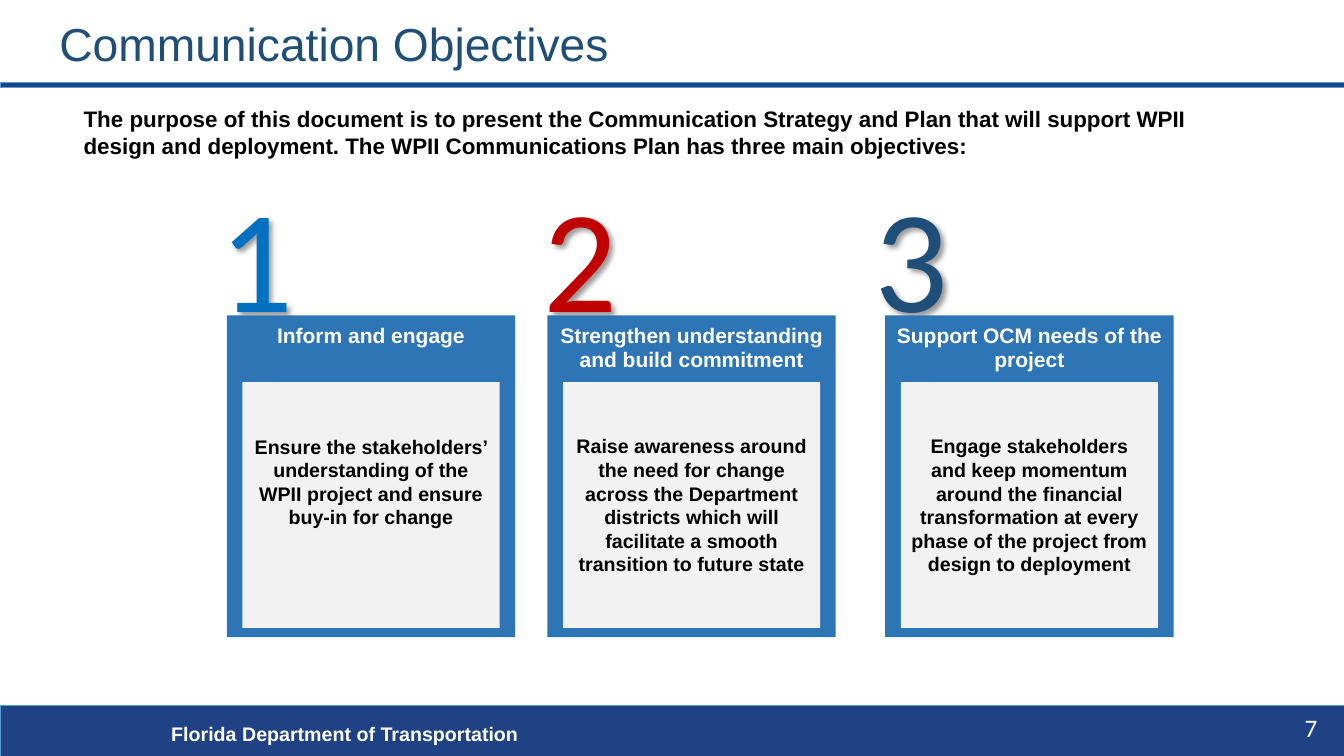
from dataclasses import dataclass

from lxml.etree import SubElement
from pptx import Presentation
from pptx.dml.color import RGBColor
from pptx.enum.shapes import MSO_SHAPE
from pptx.enum.text import MSO_ANCHOR, PP_ALIGN
from pptx.oxml.ns import qn
from pptx.shapes.autoshape import Shape
from pptx.slide import Slide
from pptx.util import Inches, Pt


@dataclass(frozen=True)
class Theme:
    font: str = "Arial"
    number_font: str = "Calibri"
    navy: str = "1F4284"
    edge: str = "5B9BD5"
    title: str = "1F4E79"
    card: str = "2E75B6"
    panel: str = "F2F2F2"
    white: str = "FFFFFF"
    black: str = "000000"
    title_size: float = 33
    intro_size: float = 16
    heading_size: float = 15
    body_size: float = 14
    page_size: float = 18
    number_size: float = 104.3


@dataclass(frozen=True)
class Box:
    left: float
    top: float
    width: float
    height: float


@dataclass(frozen=True)
class Objective:
    number: str
    color: str
    number_left: float
    card_left: float
    heading: str
    body: str
    body_bottom_inset: float = 0.05


THEME = Theme()
DEFAULT_INSETS = (0.1, 0.05, 0.1, 0.05)

OBJECTIVES = [
    Objective("1", "0070C0", 1.98, 2.25, "Inform and engage",
              "Ensure the stakeholders’ understanding of the WPII project "
              "and ensure buy-in for change", 0.51),
    Objective("2", "C00000", 5.2, 5.43,
              "Strengthen understanding and build commitment",
              "Raise awareness around the need for change across the Department "
              "districts which will facilitate a smooth transition to future state"),
    Objective("3", THEME.title, 8.48, 8.78, "Support OCM needs of the project",
              "Engage stakeholders and keep momentum around the financial "
              "transformation at every phase of the project from design to deployment"),
]


def write_text(shape: Shape, text: str, *, size: float, color: str,
               font: str = THEME.font, bold: bool = False,
               align: PP_ALIGN = PP_ALIGN.LEFT,
               anchor: MSO_ANCHOR = MSO_ANCHOR.TOP,
               insets: tuple[float, float, float, float] = DEFAULT_INSETS,
               line_spacing: float = 1.0, space_after: float = 0,
               wrap: bool = True) -> None:
    """Fill a shape with one paragraph; insets run left, top, right, bottom."""
    frame = shape.text_frame
    frame.word_wrap = wrap
    frame.vertical_anchor = anchor
    (frame.margin_left, frame.margin_top,
     frame.margin_right, frame.margin_bottom) = map(Inches, insets)
    paragraph = frame.paragraphs[0]
    paragraph.alignment = align
    paragraph.line_spacing = line_spacing
    paragraph.space_after = Pt(space_after)
    run = paragraph.add_run()
    run.text = text
    run.font.name = font
    run.font.size = Pt(size)
    run.font.bold = bold
    run.font.color.rgb = RGBColor.from_string(color)


def add_text_box(slide: Slide, box: Box) -> Shape:
    return slide.shapes.add_textbox(Inches(box.left), Inches(box.top),
                                    Inches(box.width), Inches(box.height))


def add_rectangle(slide: Slide, box: Box, fill: str,
                  line: str | None = None) -> Shape:
    shape = slide.shapes.add_shape(
        MSO_SHAPE.RECTANGLE, Inches(box.left), Inches(box.top),
        Inches(box.width), Inches(box.height))
    shape.shadow.inherit = False
    shape.fill.solid()
    shape.fill.fore_color.rgb = RGBColor.from_string(fill)
    if line:
        shape.line.color.rgb = RGBColor.from_string(line)
        shape.line.width = Pt(0.5)
    else:
        shape.line.fill.background()
    return shape


def add_soft_shadow(shape: Shape) -> None:
    """Cast a blurred shadow to the lower right of the shape's text."""
    effects = SubElement(shape.element.spPr, qn("a:effectLst"))
    shadow = SubElement(effects, qn("a:outerShdw"), blurRad=str(Pt(4)),
                        dist=str(Pt(3)), dir="2700000", algn="tl",
                        rotWithShape="0")
    color = SubElement(shadow, qn("a:srgbClr"), val=THEME.black)
    SubElement(color, qn("a:alpha"), val="40000")


def add_number(slide: Slide, objective: Objective) -> None:
    shape = add_text_box(slide, Box(objective.number_left, 1.88, 1.12, 1.53))
    write_text(shape, objective.number, size=THEME.number_size,
               color=objective.color, font=THEME.number_font,
               align=PP_ALIGN.CENTER, insets=(0, 0.04, 0, 0),
               line_spacing=0.85, space_after=5.4)
    add_soft_shadow(shape)


def add_card(slide: Slide, objective: Objective) -> None:
    card = add_rectangle(slide, Box(objective.card_left, 3.13, 2.86, 3.19),
                         THEME.card)
    write_text(card, objective.heading, size=THEME.heading_size,
               color=THEME.white, bold=True, align=PP_ALIGN.CENTER,
               insets=(0.1, 0.09, 0.1, 0.04), line_spacing=0.95, space_after=7.3)
    panel = add_rectangle(slide, Box(objective.card_left + 0.155, 3.79, 2.55, 2.44),
                          THEME.panel)
    write_text(panel, objective.body, size=THEME.body_size, color=THEME.black,
               bold=True, align=PP_ALIGN.CENTER, anchor=MSO_ANCHOR.MIDDLE,
               insets=(0.1, 0.05, 0.1, objective.body_bottom_inset))


def add_frame(slide: Slide) -> None:
    """Add the header rule, title, introduction and footer."""
    for band in (Box(0, 7, 13.33, 0.5), Box(0, 0.82, 13.33, 0.05)):
        add_rectangle(slide, band, THEME.navy, THEME.edge)
    write_text(add_text_box(slide, Box(1.6, 7.11, 7.98, 0.34)),
               "Florida Department of Transportation",
               size=THEME.body_size, color=THEME.white, bold=True)
    write_text(add_text_box(slide, Box(0.49, 0.1, 11.5, 0.72)),
               "Communication Objectives", size=THEME.title_size,
               color=THEME.title, anchor=MSO_ANCHOR.MIDDLE, line_spacing=0.9)
    write_text(add_text_box(slide, Box(0.83, 1.04, 11.16, 5.14)),
               "The purpose of this document is to present the Communication "
               "Strategy and Plan that will support WPII design and deployment. "
               "The WPII Communications Plan has three main objectives:",
               size=THEME.intro_size, color=THEME.black, bold=True,
               insets=(0, 0, 0, 0))
    write_text(add_text_box(slide, Box(12.84, 7.02, 0.28, 0.4)), "7",
               size=THEME.page_size, color=THEME.white,
               font=THEME.number_font, wrap=False)


def main() -> None:
    presentation = Presentation()
    presentation.slide_width = Inches(13.33)
    presentation.slide_height = Inches(7.5)
    slide = presentation.slides.add_slide(presentation.slide_layouts[6])
    add_frame(slide)
    for objective in OBJECTIVES:
        add_number(slide, objective)
    for objective in OBJECTIVES:
        add_card(slide, objective)
    presentation.save("out.pptx")


if __name__ == "__main__":
    main()
